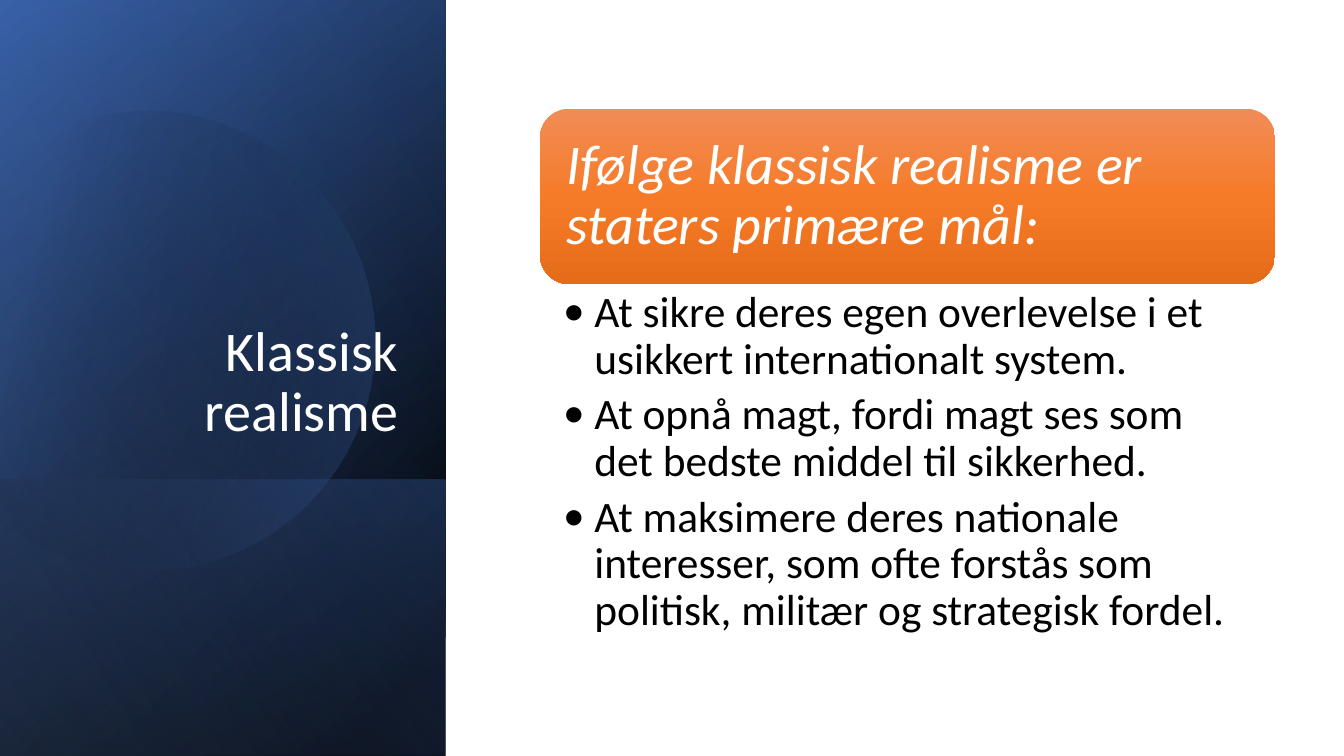
from dataclasses import dataclass
from math import cos, radians, sin

from lxml.etree import SubElement
from pptx import Presentation
from pptx.dml.color import RGBColor
from pptx.enum.shapes import MSO_SHAPE as Preset
from pptx.enum.text import MSO_ANCHOR as Anchor, PP_ALIGN as Align
from pptx.oxml.ns import qn
from pptx.util import Cm, Pt

COLORS = {
    "white": "FFFFFF", "black": "000000", "navy": "2F5597", "blue": "4472C4",
    "sky": "8FAADC", "peach": "F18C57", "orange": "F67B28", "rust": "E56C19",
}
FONT = "Calibri"
PANEL_WIDTH, PAGE_HEIGHT = 11.23, 19.05


@dataclass
class Stop:
    position: int
    color: str
    opacity: int = 100


@dataclass
class Layer:
    """A shaded layer of the side panel, resting on the bottom of the page."""
    height: float
    angle: int
    stops: list[Stop]


@dataclass
class TextBlock:
    left: float
    top: float
    width: float
    height: float
    insets: tuple[float, float, float, float]
    anchor: Anchor
    size: int
    color: str
    lines: list[str]
    align: Align = Align.LEFT
    italic: bool = False
    bullet_indent: float = 0


LAYERS_BELOW = [
    Layer(PAGE_HEIGHT, 50, [Stop(8, "black"), Stop(100, "navy")]),
    Layer(PAGE_HEIGHT, 30, [Stop(0, "black", 0), Stop(99, "blue", 46)]),
    Layer(6.96, 130, [Stop(2, "blue", 29), Stop(100, "black", 30)]),
]
LAYER_ABOVE = Layer(PAGE_HEIGHT, 120, [Stop(0, "black", 0), Stop(99, "sky", 11)])

# Outline of the disc on the page, in cm: cubic curves, then straight corners
DISC_TILT = 343.9
DISC_CENTER = (4.03, 8.5)
DISC_START = (3.78, 2.79)
DISC_CURVES = [
    ((6.25, 2.84), (8.51, 4.5), (9.22, 6.99)),
    ((10.11, 10.08), (8.33, 13.28), (5.26, 14.17)),
    ((3.33, 14.73), (1.35, 14.25), (-0.08, 13.06)),
    ((-0.38, 12.78),) * 3,
    ((-0.38, 4.45),) * 3,
    ((0, 4.09),) * 3,
    ((0.58, 3.61), (1.27, 3.25), (2.03, 3.02)),
    ((2.62, 2.87), (3.2, 2.79), DISC_START),
]

TEXTS = [
    TextBlock(1.63, 4.67, 8.66, 6.65, (0.25, 0.13, 0.25, 0.13), Anchor.BOTTOM,
              40, "white", ["Klassisk realisme"], align=Align.RIGHT),
    TextBlock(13.84, 2.95, 18.08, 3.99, (0.43, 0.43, 0.43, 0.43), Anchor.MIDDLE,
              40, "white", ["Ifølge klassisk realisme er staters primære mål:"],
              italic=True),
    TextBlock(13.61, 7.16, 18.52, 9.42, (0.58, 0.15, 0.79, 0.15), Anchor.TOP,
              31, "black", [
                  "At sikre deres egen overlevelse i et usikkert internationalt system.",
                  "At opnå magt, fordi magt ses som det bedste middel til sikkerhed.",
                  "At maksimere deres nationale interesser, som ofte forstås som "
                  "politisk, militær og strategisk fordel.",
              ], bullet_indent=0.79),
]


def shade(shape, stops: list[Stop], angle: int) -> None:
    shape.shadow.inherit = False
    shape.line.fill.background()
    shape.fill.gradient()
    shape.fill.gradient_angle = 360 - angle
    stop_list = shape._element.spPr.find(qn("a:gradFill")).find(qn("a:gsLst"))
    stop_list.clear()
    for stop in stops:
        entry = SubElement(stop_list, qn("a:gs"), pos=str(stop.position * 1000))
        color = SubElement(entry, qn("a:srgbClr"), val=COLORS[stop.color])
        if stop.opacity < 100:
            SubElement(color, qn("a:alpha"), val=str(stop.opacity * 1000))


def add_layer(page, layer: Layer) -> None:
    # The frame is turned a quarter, so its long side runs down the page
    center_y = PAGE_HEIGHT - layer.height / 2
    shape = page.shapes.add_shape(
        Preset.RECTANGLE, Cm((PANEL_WIDTH - layer.height) / 2),
        Cm(center_y - PANEL_WIDTH / 2), Cm(layer.height), Cm(PANEL_WIDTH))
    shape.rotation = 90
    shape._element.spPr.find(qn("a:xfrm")).set("flipH", "1")
    shade(shape, layer.stops, layer.angle)


def untilt(x: float, y: float) -> tuple[int, int]:
    turn = radians(-DISC_TILT)
    dx, dy = x - DISC_CENTER[0], y - DISC_CENTER[1]
    return (Cm(DISC_CENTER[0] + dx * cos(turn) - dy * sin(turn)),
            Cm(DISC_CENTER[1] + dx * sin(turn) + dy * cos(turn)))


def add_disc(page, steps: int = 16) -> None:
    points, start = [], DISC_START
    for first, second, end in DISC_CURVES:
        for step in range(1, steps + 1):
            t = step / steps
            weights = ((1 - t) ** 3, 3 * t * (1 - t) ** 2, 3 * t * t * (1 - t), t ** 3)
            corners = (start, first, second, end)
            x, y = (sum(w * c[axis] for w, c in zip(weights, corners)) for axis in (0, 1))
            points.append(untilt(x, y))
        start = end
    builder = page.shapes.build_freeform(*untilt(*DISC_START))
    builder.add_line_segments(points, close=True)
    disc = builder.convert_to_shape()
    disc.rotation = DISC_TILT
    shade(disc, [Stop(29, "black", 0), Stop(100, "blue", 43)], 30)


def add_text(page, block: TextBlock) -> None:
    box = page.shapes.add_textbox(
        Cm(block.left), Cm(block.top), Cm(block.width), Cm(block.height))
    frame = box.text_frame
    frame.word_wrap = True
    frame.vertical_anchor = block.anchor
    (frame.margin_left, frame.margin_top,
     frame.margin_right, frame.margin_bottom) = map(Cm, block.insets)
    for index, line in enumerate(block.lines):
        para = frame.add_paragraph() if index else frame.paragraphs[0]
        if block.bullet_indent:
            properties = para._p.get_or_add_pPr()
            properties.set("marL", str(Cm(block.bullet_indent)))
            properties.set("indent", str(-Cm(block.bullet_indent)))
            SubElement(properties, qn("a:buFont"), typeface=FONT)
            SubElement(properties, qn("a:buChar"), char="•")
        para.alignment = block.align
        para.line_spacing = 0.9
        para.space_after = Pt(6)
        span = para.add_run()
        span.text = line
        span.font.name = FONT
        span.font.size = Pt(block.size)
        span.font.italic = block.italic
        span.font.color.rgb = RGBColor.from_string(COLORS[block.color])


def main() -> None:
    deck = Presentation()
    deck.slide_width, deck.slide_height = Cm(33.87), Cm(PAGE_HEIGHT)
    page = deck.slides.add_slide(deck.slide_layouts[6])

    # Side panel
    for layer in LAYERS_BELOW:
        add_layer(page, layer)
    add_disc(page)
    add_layer(page, LAYER_ABOVE)

    # Heading card
    card = page.shapes.add_shape(
        Preset.ROUNDED_RECTANGLE, Cm(13.61), Cm(2.74), Cm(18.52), Cm(4.42))
    shade(card, [Stop(0, "peach"), Stop(50, "orange"), Stop(100, "rust")], 90)

    # Title, heading and bullets
    for block in TEXTS:
        add_text(page, block)

    deck.save("out.pptx")


if __name__ == "__main__":
    main()
